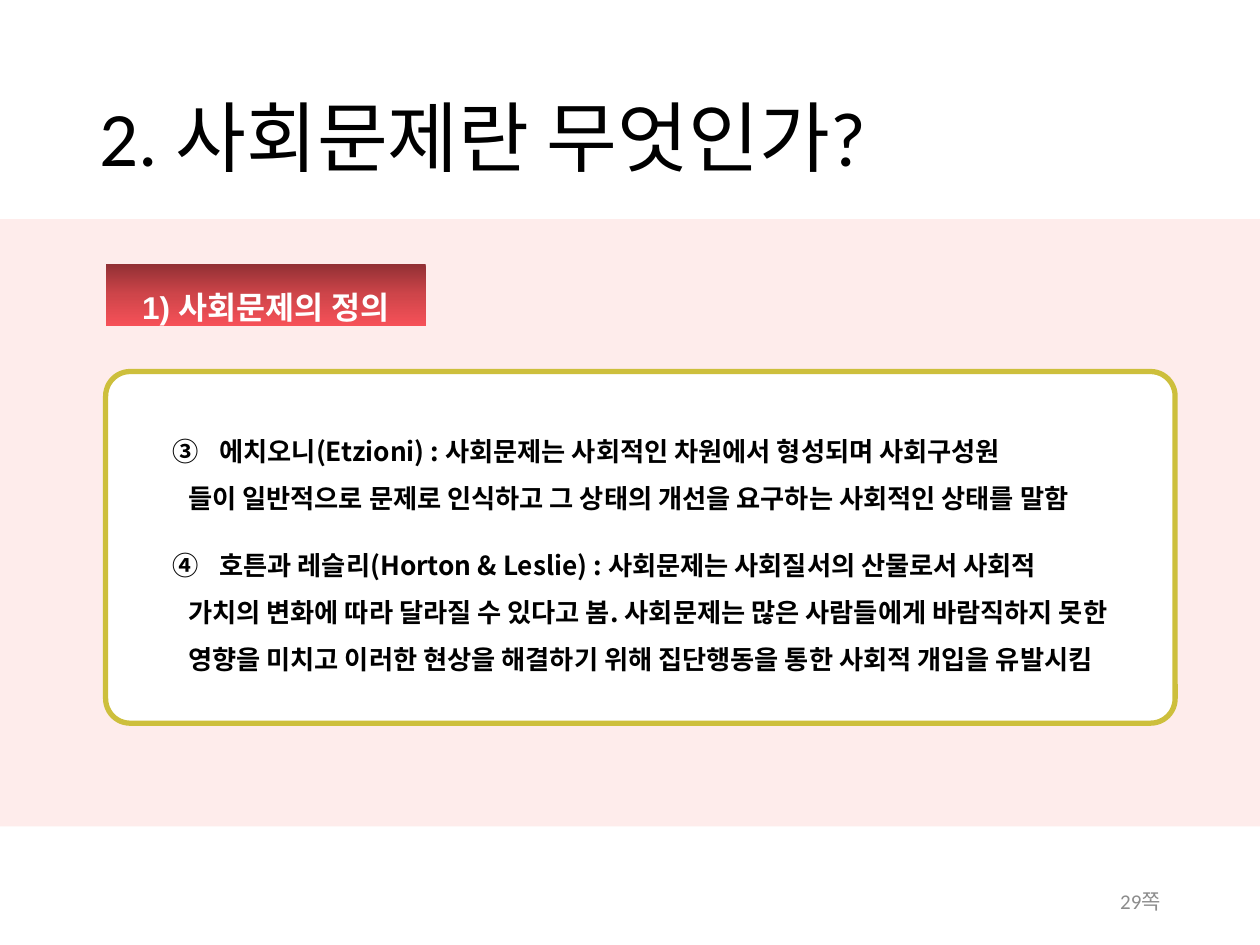
from copy import deepcopy

from lxml import etree
from pptx import Presentation
from pptx import util as u
from pptx.dml.color import RGBColor
from pptx.enum import shapes, text
from pptx.oxml.ns import qn

BLACK = RGBColor(0x00, 0x00, 0x00)
WHITE = RGBColor(0xFF, 0xFF, 0xFF)
GRAY = RGBColor(0x8C, 0x8C, 0x8C)
PINK = RGBColor(0xFE, 0xEC, 0xEB)
OLIVE = RGBColor(0xCD, 0xBF, 0x3C)
REDS = ((0, RGBColor(0x92, 0x30, 0x34)),
        (0.5, RGBColor(0xCF, 0x45, 0x4A)),
        (1, RGBColor(0xF6, 0x51, 0x58)))

# Start number (None for plain text), space before in points, wording
POINTS = (
    (3, 0, "에치오니(Etzioni) : 사회문제는 사회적인 차원에서 형성되며 사회구성원"),
    (None, 0, "들이 일반적으로 문제로 인식하고 그 상태의 개선을 요구하는 사회적인 상태를 말함"),
    (4, 11, "호튼과 레슬리(Horton & Leslie) : 사회문제는 사회질서의 산물로서 사회적"),
    (None, 0, "가치의 변화에 따라 달라질 수 있다고 봄. 사회문제는 많은 사람들에게 바람직하지 못한 "
              "영향을 미치고 이러한 현상을 해결하기 위해 집단행동을 통한 사회적 개입을 유발시킴"),
)


class Deck:
    korean = "Noto Sans CJK KR"
    latin = "Calibri"

    def __init__(self):
        self.prs = Presentation()
        self.prs.slide_width, self.prs.slide_height = u.Cm(25.4), u.Cm(19.05)
        self.slide = self.prs.slides.add_slide(self.prs.slide_layouts[5])

    def style(self, par, size, color, font=None, bold=False, align=text.PP_ALIGN.LEFT, gap=1.0):
        par.alignment, par.line_spacing = align, gap
        for run in par.runs:
            run.font.size, run.font.bold = u.Pt(size), bold
            run.font.name = font or self.latin
            run.font.color.rgb = color
            latin = run._r.rPr.find(qn("a:latin"))
            east = etree.Element(qn("a:ea"), typeface=self.korean)
            latin.addnext(east)

    def title(self, words, box):
        shape = self.slide.shapes.title
        shape.left, shape.top, shape.width, shape.height = map(u.Cm, box)
        frame = shape.text_frame
        frame.text = words
        frame.auto_size = text.MSO_AUTO_SIZE.NONE
        frame.vertical_anchor = text.MSO_ANCHOR.MIDDLE
        self.style(frame.paragraphs[0], 44, BLACK, gap=0.9)
        self.slide.shapes._spTree.append(shape._element)  # in front of the band

    def shape(self, kind, box, fill=None, line=None):
        shape = self.slide.shapes.add_shape(kind, *map(u.Cm, box))
        shape.shadow.inherit = False
        if fill is not None:
            shape.fill.solid()
            shape.fill.fore_color.rgb = fill
        if line is None:
            shape.line.fill.background()
        else:
            shape.line.color.rgb, shape.line.width = line, u.Pt(3)
        return shape

    def badge(self, words, box):
        shape = self.shape(shapes.MSO_SHAPE.RECTANGLE, box)
        shape.fill.gradient()
        shape.fill.gradient_angle = 270
        first = shape.fill._fill._gradFill.gsLst[0]
        first.addnext(deepcopy(first))
        for stop, (place, color) in zip(shape.fill.gradient_stops, REDS):
            stop.position, stop.color.rgb = place, color
        frame = shape.text_frame
        frame.margin_left = frame.margin_right = u.Cm(0.18)
        frame.margin_top = frame.margin_bottom = u.Cm(0.1)
        frame.vertical_anchor = text.MSO_ANCHOR.TOP
        frame.text = words
        par = frame.paragraphs[0]
        self.style(par, 18, WHITE, "Arial", True, text.PP_ALIGN.CENTER, 1.5)
        par.space_before = u.Pt(3.6)

    def panel(self, points, box):
        shape = self.shape(shapes.MSO_SHAPE.ROUNDED_RECTANGLE, box, WHITE, OLIVE)
        shape.adjustments[0] = 0.07
        frame = shape.text_frame
        frame.vertical_anchor = text.MSO_ANCHOR.MIDDLE
        frame.text = "\n".join(words for _, _, words in points)
        for par, (start, before, _) in zip(frame.paragraphs, points):
            self.style(par, 15, BLACK, self.korean, True, gap=1.5)
            par.space_before = u.Pt(before)
            self.indent(par, start)

    def indent(self, par, start):
        """Hang a circled number, or indent plainly when start is None."""
        props = par._p.get_or_add_pPr()
        left, hang = (1.27, 0) if start is None else (1.9, -0.95)
        props.set("marL", str(u.Cm(left)))
        props.set("indent", str(u.Cm(hang)))
        if start is None:
            etree.SubElement(props, qn("a:buNone"))
        else:
            etree.SubElement(props, qn("a:buFont"), typeface="+mj-lt")
            etree.SubElement(props, qn("a:buAutoNum"),
                             type="circleNumDbPlain", startAt=str(start))

    def label(self, words, box):
        frame = self.slide.shapes.add_textbox(*map(u.Cm, box)).text_frame
        frame.word_wrap = True
        frame.vertical_anchor = text.MSO_ANCHOR.MIDDLE
        frame.text = words
        self.style(frame.paragraphs[0], 12, GRAY, align=text.PP_ALIGN.RIGHT)


def main():
    deck = Deck()
    deck.shape(shapes.MSO_SHAPE.RECTANGLE, (0, 4.42, 25.4, 12.24), PINK)
    deck.title("2. 사회문제란 무엇인가?", (1.75, 1.02, 21.9, 3.68))
    deck.label("29쪽", (17.93, 17.65, 5.72, 1.02))
    deck.panel(POINTS, (2.13, 7.49, 21.56, 7.09))
    deck.badge("1) 사회문제의 정의", (2.13, 5.33, 6.45, 1.24))
    deck.prs.save("out.pptx")


if __name__ == "__main__":
    main()
